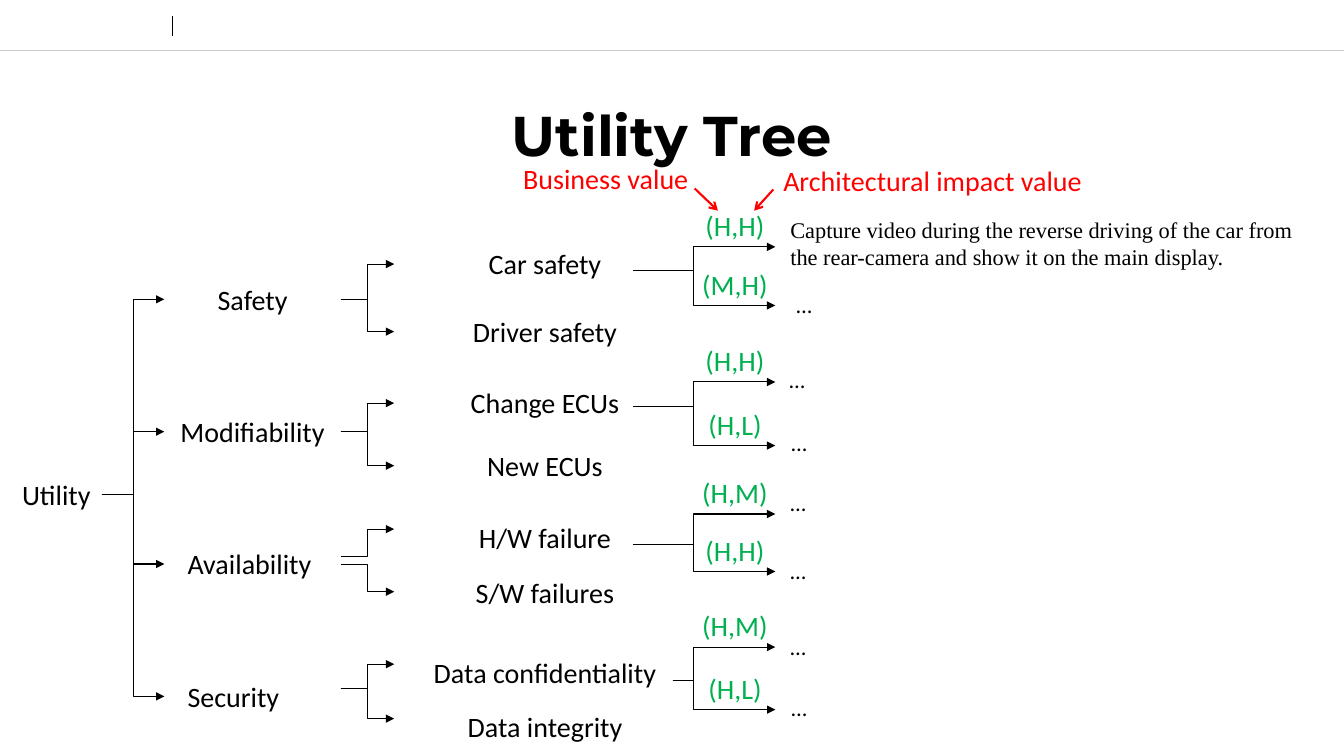
from dataclasses import dataclass

from lxml import etree
from pptx import Presentation
from pptx import util as u
from pptx.dml.color import RGBColor
from pptx.enum import shapes, text
from pptx.oxml.ns import qn


@dataclass(frozen=True)
class Theme:
    ink: str = "000000"
    rating: str = "00B050"
    callout: str = "FF0000"
    rule: str = "CCCCCC"
    body: str = "Calibri"
    serif: str = "Times New Roman"
    heading: str = "Montserrat"
    title_size: int = 40
    label_size: int = 20
    note_size: int = 16


THEME = Theme()
WIDTH, HEIGHT = 13.33, 7.5
LEFT, CENTER = text.PP_ALIGN.LEFT, text.PP_ALIGN.CENTER

# Content. Row heights are inches down the slide.
TITLE = "Utility Tree"
ROOT = ("Utility", 4.91)
# Quality, alignment, extra indent, rows where its two branches start
QUALITIES = [
    ("Safety", CENTER, 0, (2.97, 2.97)),
    ("Modifiability", CENTER, 0, (4.28, 4.28)),
    ("Availability", LEFT, 0.13, (5.52, 5.6)),
    ("Security", LEFT, 0.13, (6.83, 6.83)),
]
# Per quality: two attributes as (name, label row, arrow row)
ATTRIBUTES = [
    [("Car safety", 2.62, 2.62), ("Driver safety", 3.29, 3.29)],
    [("Change ECUs", 4.0, 4.0), ("New ECUs", 4.62, 4.62)],
    [("H/W failure", 5.33, 5.25), ("S/W failures", 5.88, 5.87)],
    [("Data confidentiality", 6.67, 6.59), ("Data integrity", 7.21, 7.13)],
]
CAPTURE = ("Capture video during the reverse driving of the car from "
           "the rear-camera and show it on the main display.")
# Per quality: branch start (x, row), then (rating, arrow row, scenario, its x, its row)
SCENARIOS = [
    ((6.28, 2.68), [("(H,H)", 2.45, CAPTURE, 7.74, 2.42), ("(M,H)", 3.03, "…", 7.8, 3.02)]),
    ((6.28, 4.03), [("(H,H)", 3.79, "…", 7.73, 3.77), ("(H,L)", 4.42, "…", 7.75, 4.39)]),
    ((6.28, 5.4), [("(H,M)", 5.1, "…", 7.74, 4.99), ("(H,H)", 5.67, "…", 7.74, 5.66)]),
    ((6.67, 6.75), [("(H,M)", 6.42, "…", 7.74, 6.42), ("(H,L)", 7.04, "…", 7.75, 7.02)]),
]
# Callout, x, row, width, arrow from, arrow to
CALLOUTS = [
    ("Business value", 5.09, 1.77, 1.86, (6.89, 1.87), (7.12, 2.09)),
    ("Architectural impact value", 7.67, 1.79, 3.21, (7.67, 1.88), (7.48, 2.09)),
]

# Columns as (left, width)
ROOT_COL = (0.12, 0.89)
QUALITY_COL = (1.63, 1.75)
ATTRIBUTE_COL = (3.91, 2.99)
RATING_COL = (6.86, 0.86)
SCENARIO_WIDTH = 5.38
SCENARIO_EDGE = 7.69
SCENARIO_BEND = 6.88
FIRST_QUALITY, QUALITY_STEP = 2.97, 1.313
RATING_LIFT = 0.21
LABEL_HEIGHT, NOTE_HEIGHT, CAPTURE_HEIGHT = 0.44, 0.37, 0.64


def style(frame, size, color=THEME.ink, font=THEME.body, align=LEFT, bold=False):
    paragraph = frame.paragraphs[0]
    paragraph.alignment = align
    for run in paragraph.runs:
        run.font.size = u.Pt(size)
        run.font.name = font
        run.font.bold = bold
        run.font.color.rgb = RGBColor.from_string(color)


def label(slide, words, column, row, size=THEME.label_size, height=LABEL_HEIGHT,
          wrap=True, indent=0, **look):
    """Text box filling a column and centred vertically on a row."""
    left, width = column
    box = slide.shapes.add_textbox(
        u.Inches(left), u.Inches(row - height / 2), u.Inches(width), u.Inches(height))
    frame = box.text_frame
    frame.text = words
    frame.word_wrap = wrap
    frame.margin_left = u.Inches(0.1 + indent)
    style(frame, size, **look)


def line(slide, start, end, color=THEME.ink, weight=0.75, head=None, bend=None):
    """Straight line, or an elbow turning at x = bend, with an optional arrowhead."""
    kind = shapes.MSO_CONNECTOR.STRAIGHT if bend is None else shapes.MSO_CONNECTOR.ELBOW
    connector = slide.shapes.add_connector(kind, *(u.Inches(v) for v in (*start, *end)))
    connector.line.color.rgb = RGBColor.from_string(color)
    connector.line.width = u.Pt(weight)
    properties = connector._element.spPr
    if head:
        etree.SubElement(connector.line._get_or_add_ln(), qn("a:tailEnd"), type=head)
    if bend is not None:
        share = round((bend - start[0]) / (end[0] - start[0]) * 100000)
        guides = properties.find(qn("a:prstGeom")).find(qn("a:avLst"))
        etree.SubElement(guides, qn("a:gd"), name="adj1", fmla=f"val {share}")
    etree.SubElement(properties, qn("a:effectLst"))


def branch(slide, start, end, bend=None):
    middle = (start[0] + end[0]) / 2
    line(slide, start, end, head="triangle", bend=middle if bend is None else bend)


def add_header(slide):
    line(slide, (0, 0.5), (WIDTH, 0.5), THEME.rule, 0.25)
    line(slide, (1.71, 0.16), (1.71, 0.36), weight=0.5)
    title = slide.shapes.title
    title.left, title.top = u.Inches(0), u.Inches(0.92)
    title.width, title.height = u.Inches(WIDTH), u.Inches(0.83)
    title.text_frame.text = TITLE
    title.text_frame.vertical_anchor = text.MSO_ANCHOR.MIDDLE
    style(title.text_frame, THEME.title_size, font=THEME.heading, align=CENTER, bold=True)


def add_qualities(slide):
    root, root_row = ROOT
    label(slide, root, ROOT_COL, root_row, wrap=False)
    root_edge, quality_edge = sum(ROOT_COL), sum(QUALITY_COL)
    for i, (quality, align, indent, starts) in enumerate(QUALITIES):
        row = FIRST_QUALITY + i * QUALITY_STEP
        label(slide, quality, QUALITY_COL, row, align=align, indent=indent)
        branch(slide, (root_edge, root_row), (QUALITY_COL[0], row))
        for start, (attribute, label_row, arrow_row) in zip(starts, ATTRIBUTES[i]):
            label(slide, attribute, ATTRIBUTE_COL, label_row, align=CENTER)
            branch(slide, (quality_edge, start), (ATTRIBUTE_COL[0], arrow_row))


def add_scenarios(slide):
    for start, pair in SCENARIOS:
        for rating, arrow_row, scenario, left, row in pair:
            branch(slide, start, (SCENARIO_EDGE, arrow_row), SCENARIO_BEND)
            label(slide, rating, RATING_COL, arrow_row - RATING_LIFT, wrap=False,
                  color=THEME.rating, align=CENTER)
            detailed = scenario == CAPTURE
            label(slide, scenario, (left, SCENARIO_WIDTH), row, THEME.note_size,
                  CAPTURE_HEIGHT if detailed else NOTE_HEIGHT,
                  font=THEME.serif if detailed else THEME.body)


def add_callouts(slide):
    for words, left, row, width, start, end in CALLOUTS:
        label(slide, words, (left, width), row, wrap=False, color=THEME.callout)
        line(slide, start, end, THEME.callout, 1.5, head="arrow")


def main():
    deck = Presentation()
    deck.slide_width, deck.slide_height = u.Inches(WIDTH), u.Inches(HEIGHT)
    slide = deck.slides.add_slide(deck.slide_layouts[5])
    add_header(slide)
    add_qualities(slide)
    add_scenarios(slide)
    add_callouts(slide)
    deck.save("out.pptx")


if __name__ == "__main__":
    main()
